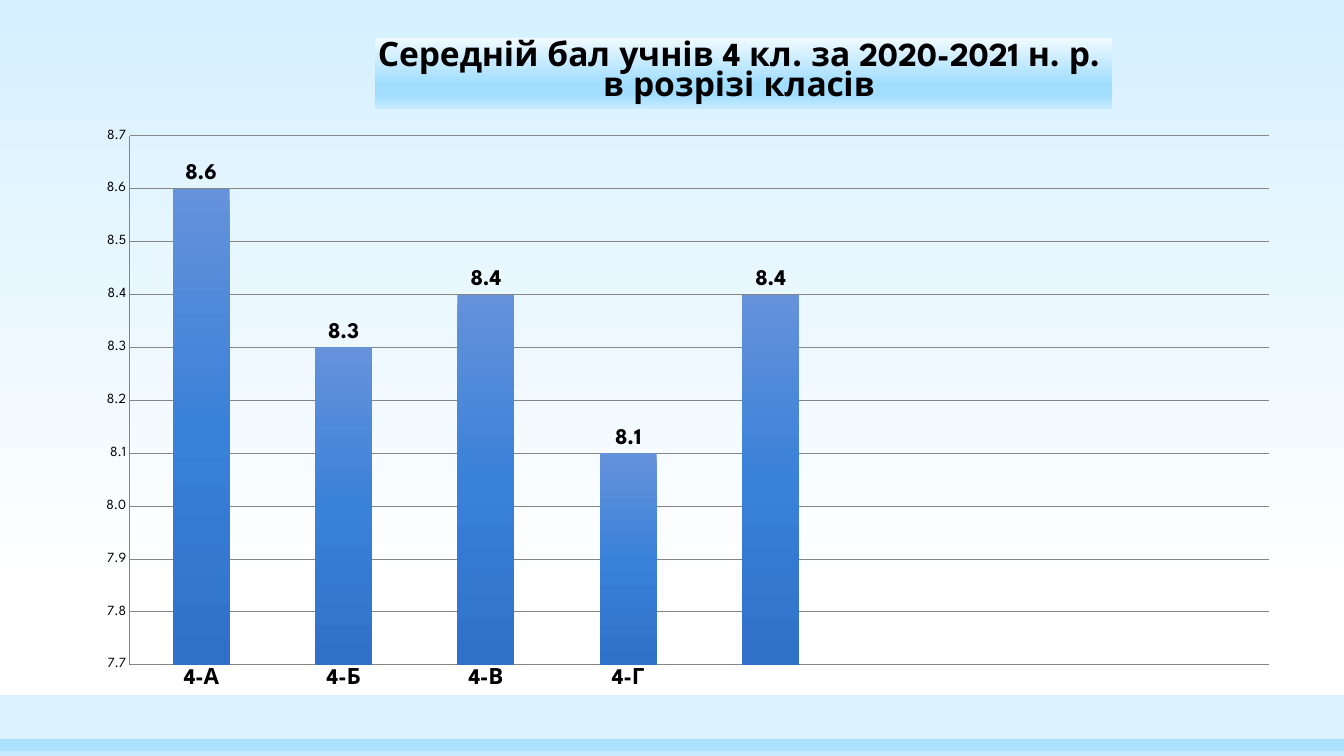
from dataclasses import dataclass

from lxml.etree import SubElement as Sub
from pptx import Presentation
from pptx.chart.data import CategoryChartData as Data
from pptx.dml.color import RGBColor as Rgb
from pptx.enum.chart import XL_CHART_TYPE as Kind
from pptx.enum.chart import XL_LABEL_POSITION as Spot
from pptx.enum.chart import XL_TICK_MARK as Tick
from pptx.enum.shapes import MSO_SHAPE as Form
from pptx.enum.text import PP_ALIGN as Align
from pptx.oxml.ns import qn
from pptx.util import Emu, Pt

SCALE = 914400 / 100.8
FONT = "League Spartan"
HUES = {"band": "31B6FD", "text": "000000", "grid": "868686"}
SKY = {0: "D6F0FF", 79: "FFFFFF"}
GLOW = {0: "F0FAFF", 65: "A0DDFF", 80: "A0DDFF", 100: "C8ECFF"}
BLUE = {0: "6592DB", 50: "3A81D9", 100: "2F71C8"}
TITLE = "Середній бал учнів 4 кл. за 2020-2021 н. р. \nв розрізі класів "
NAMES = ["4-А", "4-Б", "4-В", "4-Г", "", "", "", ""]
MARKS = [8.6, 8.3, 8.4, 8.1, 8.4, None, None, None]


@dataclass(frozen=True)
class Box:
    left: int
    top: int
    width: int
    height: int

    def emu(self) -> list[Emu]:
        sides = (self.left, self.top, self.width, self.height)
        return [px(side) for side in sides]


@dataclass(frozen=True)
class Band:
    box: Box
    alpha: int


FRAME = Box(83, 27, 1211, 677)
PLOT = Box(130, 136, 1139, 529)
HEAD = Box(375, 38, 738, 71)
BANDS = [Band(Box(0, 695, 1344, 56), 17), Band(Box(0, 739, 1344, 17), 28)]


def px(count: int) -> Emu:
    return Emu(round(count * SCALE))


def style(font, size: int, bold: bool = False) -> None:
    for key, value in {"name": FONT, "size": Pt(size), "bold": bold}.items():
        setattr(font, key, value)
    font.color.rgb = Rgb.from_string(HUES["text"])


def shade(fill, root, stops: dict[int, str]) -> None:
    fill.gradient()
    fill.gradient_angle = 270
    ramp = root.find(".//" + qn("a:gsLst"))
    for old in list(ramp):
        ramp.remove(old)
    for spot, hue in stops.items():
        stop = Sub(ramp, qn("a:gs"), pos=str(spot * 1000))
        Sub(stop, qn("a:srgbClr"), val=hue)


def place(part, index: int, box: Box, sized: bool) -> None:
    for old in part.findall(qn("c:layout")):
        part.remove(old)
    layout = Sub(part, qn("c:layout"))
    part.insert(index, layout)
    rules = {"xMode": "edge", "yMode": "edge",
             "x": (box.left - FRAME.left) / FRAME.width,
             "y": (box.top - FRAME.top) / FRAME.height}
    if sized:
        rules = {"layoutTarget": "inner", **rules,
                 "w": box.width / FRAME.width, "h": box.height / FRAME.height}
    manual = Sub(layout, qn("c:manualLayout"))
    for key, value in rules.items():
        Sub(manual, qn("c:" + key), val=str(value))


def draw_band(slide, band: Band) -> None:
    shape = slide.shapes.add_shape(Form.RECTANGLE, *band.box.emu())
    shape.shadow.inherit = False
    shape.line.fill.background()
    shape.fill.solid()
    shape.fill.fore_color.rgb = Rgb.from_string(HUES["band"])
    hue = shape._element.spPr.find(".//" + qn("a:srgbClr"))
    Sub(hue, qn("a:alpha"), val=str(band.alpha * 1000))


def set_title(chart) -> None:
    chart.has_title = True
    title = chart.chart_title
    title.text_frame.text = TITLE
    for para in title.text_frame.paragraphs:
        para.alignment = Align.CENTER
        for run in para.runs:
            style(run.font, 24, True)
    shade(title.format.fill, title._element, GLOW)
    place(title._element, 1, HEAD, False)


def set_axes(chart) -> None:
    scale = chart.value_axis
    limits = {"minimum_scale": 7.7, "maximum_scale": 8.7, "major_unit": 0.1,
              "has_major_gridlines": True}
    for key, value in limits.items():
        setattr(scale, key, value)
    scale.tick_labels.number_format = "0.0"
    scale.tick_labels.number_format_is_linked = False
    lines = [scale.major_gridlines.format.line]
    for axis, size, bold in ((scale, 10, False), (chart.category_axis, 16, True)):
        axis.major_tick_mark = axis.minor_tick_mark = Tick.NONE
        style(axis.tick_labels.font, size, bold)
        lines.append(axis.format.line)
    for line in lines:
        line.width = Pt(0.75)
        line.color.rgb = Rgb.from_string(HUES["grid"])


def set_bars(chart) -> None:
    plot = chart.plots[0]
    plot.gap_width = 150
    plot.vary_by_categories = False
    bars = plot.series[0]
    shade(bars.format.fill, bars._element, BLUE)
    bars.format.line.fill.background()
    labels = bars.data_labels
    looks = {"show_value": True, "position": Spot.OUTSIDE_END,
             "number_format": "0.0", "number_format_is_linked": False}
    for key, value in looks.items():
        setattr(labels, key, value)
    style(labels.font, 16, True)


def draw_chart(slide) -> None:
    data = Data(number_format="0.0")
    data.categories = NAMES
    data.add_series("Series 1", MARKS)
    chart = slide.shapes.add_chart(Kind.COLUMN_CLUSTERED, *FRAME.emu(), data).chart
    chart.has_legend = False
    style(chart.font, 10)
    set_title(chart)
    set_axes(chart)
    set_bars(chart)
    place(chart._chartSpace.find(".//" + qn("c:plotArea")), 0, PLOT, True)


def main() -> None:
    deck = Presentation()
    deck.slide_width, deck.slide_height = px(1344), px(756)
    slide = deck.slides.add_slide(deck.slide_layouts[6])
    shade(slide.background.fill, slide._element, SKY)
    for band in BANDS:
        draw_band(slide, band)
    draw_chart(slide)
    deck.save("out.pptx")


if __name__ == "__main__":
    main()
